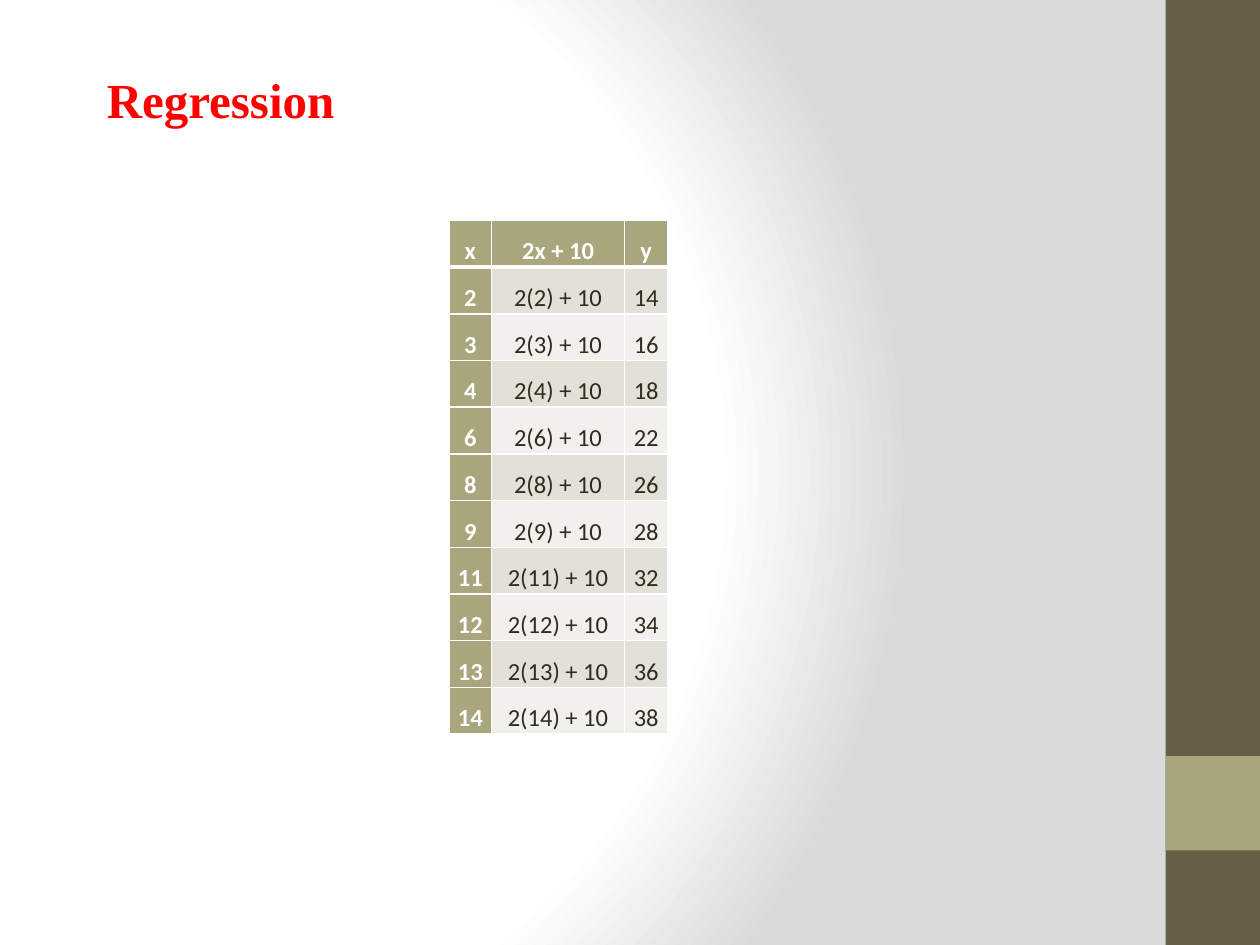
from pptx import Presentation
from pptx.dml.color import RGBColor as RGB
from pptx.enum.shapes import MSO_SHAPE as Shape
from pptx.enum.text import MSO_ANCHOR as Anchor, MSO_AUTO_SIZE as Auto, PP_ALIGN as Align
from pptx.oxml import parse_xml
from pptx.oxml.ns import nsdecls
from pptx.util import Pt

# Content
TITLE = "Regression"
HEAD = ("x", "2x + 10", "y")
INPUTS = (2, 3, 4, 6, 8, 9, 11, 12, 13, 14)
ROWS = [HEAD] + [(str(x), f"2({x}) + 10", str(2 * x + 10)) for x in INPUTS]

# Look
WHITE = RGB(0xFF, 0xFF, 0xFF)
GREY = RGB(0xDA, 0xDA, 0xDA)
BROWN = RGB(0x67, 0x5E, 0x47)
OLIVE = RGB(0xA9, 0xA5, 0x7C)
RED = RGB(0xFF, 0, 0)
INK = RGB(0x2F, 0x2B, 0x20)
BANDS = (RGB(0xE2, 0xE1, 0xD7), RGB(0xF1, 0xF0, 0xEC))
STOPS = ((0, WHITE), (75, WHITE), (100, GREY))
BARS = ((0, 540, BROWN), (432, 54, OLIVE))  # top, height, colour
BAR_LEFT, BAR_WIDTH = 666, 54
WIDTHS = (24.5, 75.8, 25)
ROW_HEIGHT = 26.7


def set_back(slide):
    """Radial gradient centred left of the middle."""
    fill = slide.background.fill
    fill.solid()
    stops = "".join(
        f'<a:gs pos="{pos * 1000}"><a:srgbClr val="{color}"/></a:gs>'
        for pos, color in STOPS)
    grad = parse_xml(
        f'<a:gradFill {nsdecls("a")} rotWithShape="1"><a:gsLst>{stops}</a:gsLst>'
        '<a:path path="circle"><a:fillToRect l="20000" t="50000" r="100000" '
        'b="50000"/></a:path></a:gradFill>')
    props = slide.background._cSld.bg.bgPr
    props.replace(props[0], grad)


def set_edges(cell, widths):
    """White borders, given in points by side."""
    props = cell._tc.get_or_add_tcPr()
    for i, (side, width) in enumerate(widths.items()):
        props.insert(i, parse_xml(
            f'<a:ln{side} {nsdecls("a")} w="{Pt(width)}"><a:solidFill>'
            f'<a:srgbClr val="{WHITE}"/></a:solidFill></a:ln{side}>'))


def set_font(para, name, size, color, bold):
    font = para.font
    font.name, font.size, font.bold = name, Pt(size), bold
    font.color.rgb = color


def main():
    deck = Presentation()
    deck.slide_width, deck.slide_height = Pt(720), Pt(540)
    slide = deck.slides.add_slide(deck.slide_layouts[6])
    set_back(slide)

    # Side bars
    for top, height, color in BARS:
        bar = slide.shapes.add_shape(
            Shape.RECTANGLE, Pt(BAR_LEFT), Pt(top), Pt(BAR_WIDTH), Pt(height))
        bar.shadow.inherit = False
        bar.fill.solid()
        bar.fill.fore_color.rgb = color
        bar.line.fill.background()

    # Title
    frame = slide.shapes.add_textbox(Pt(54), Pt(36), Pt(408), Pt(41)).text_frame
    frame.word_wrap = True
    frame.auto_size = Auto.SHAPE_TO_FIT_TEXT
    frame.text = TITLE
    set_font(frame.paragraphs[0], "Times New Roman", 28, RED, True)

    # Table of values
    table = slide.shapes.add_table(
        len(ROWS), len(HEAD), Pt(256.5), Pt(126),
        Pt(sum(WIDTHS)), Pt(ROW_HEIGHT * len(ROWS))).table
    table.first_col = True
    for col, width in zip(table.columns, WIDTHS):
        col.width = Pt(width)
    for r, row in enumerate(ROWS):
        table.rows[r].height = Pt(ROW_HEIGHT)
        for c, text in enumerate(row):
            cell = table.cell(r, c)
            key = r == 0 or c == 0
            cell.fill.solid()
            cell.fill.fore_color.rgb = OLIVE if key else BANDS[(r - 1) % 2]
            cell.margin_left = cell.margin_right = Pt(0.72)
            cell.margin_top = cell.margin_bottom = Pt(0.72)
            cell.vertical_anchor = Anchor.MIDDLE
            cell.text = text
            para = cell.text_frame.paragraphs[0]
            para.alignment, para.line_spacing = Align.CENTER, 1.5
            set_font(para, "Calibri", 14, WHITE if key else INK, key)
            set_edges(cell, {"L": 1, "R": 1, "T": 3 if r == 1 else 1,
                             "B": 3 if r == 0 else 1})

    deck.save("out.pptx")


if __name__ == "__main__":
    main()
